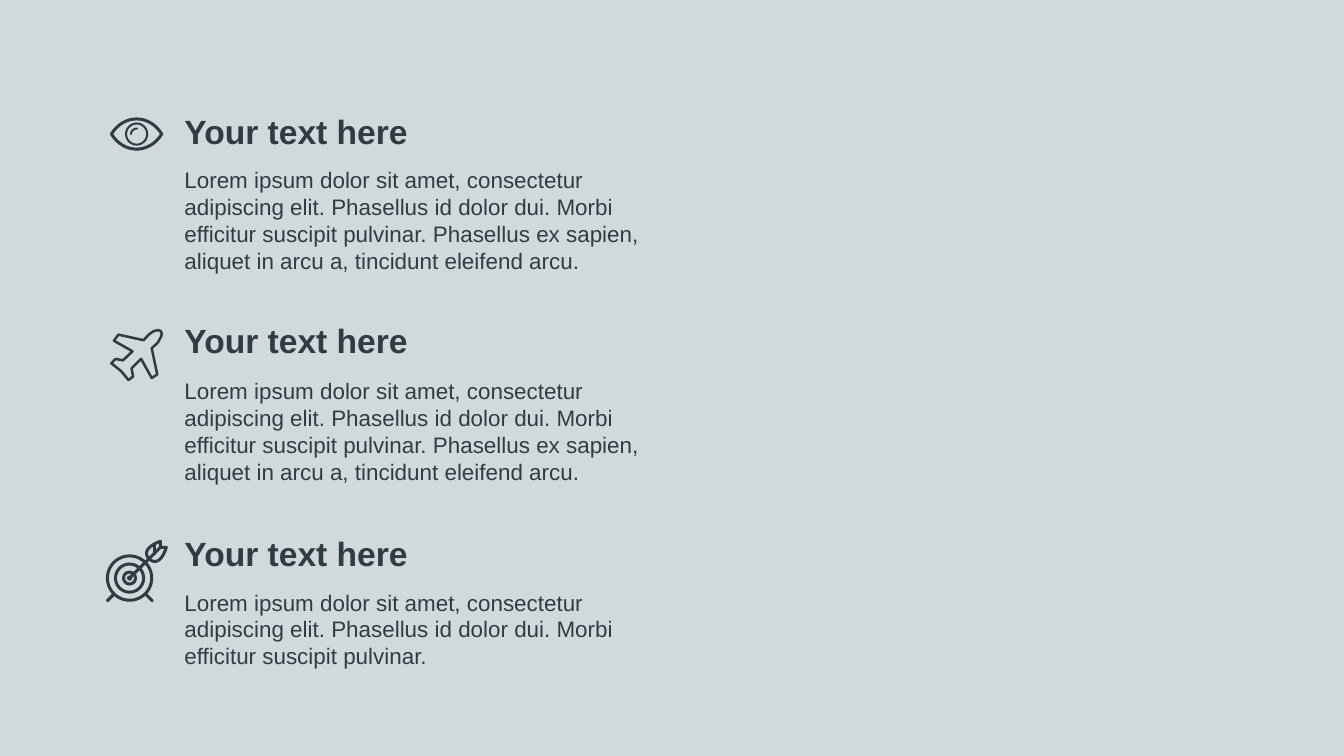
from dataclasses import dataclass

from lxml.etree import SubElement
from pptx import Presentation
from pptx.dml.color import RGBColor
from pptx.enum.shapes import MSO_CONNECTOR, MSO_SHAPE
from pptx.enum.text import MSO_AUTO_SIZE
from pptx.oxml.ns import qn
from pptx.util import Pt

PX = 9144
BODY_PITCH = 419
LINE_HEIGHT = 53
BOX_PADDING = 13


@dataclass(frozen=True)
class Theme:
    background: RGBColor = RGBColor(0xD2, 0xD9, 0xDD)
    ink: RGBColor = RGBColor(0x31, 0x3C, 0x41)
    font: str = "Arial"
    heading_size: int = 48
    body_size: int = 32


def cubic(start, control_1, control_2, end, steps=16):
    points = []
    for step in range(steps + 1):
        t = step / steps
        weights = ((1 - t) ** 3, 3 * t * (1 - t) ** 2, 3 * t * t * (1 - t), t ** 3)
        corners = (start, control_1, control_2, end)
        points.append(tuple(sum(w * c[axis] for w, c in zip(weights, corners))
                            for axis in (0, 1)))
    return points


class Canvas:
    def __init__(self, slide, theme):
        self.slide = slide
        self.theme = theme
        fill = slide.background.fill
        fill.solid()
        fill.fore_color.rgb = theme.background

    def text(self, left, top, width, height, content, size, bold=False):
        box = self.slide.shapes.add_textbox(left * PX, top * PX, width * PX, height * PX)
        frame = box.text_frame
        frame.word_wrap = True
        frame.auto_size = MSO_AUTO_SIZE.SHAPE_TO_FIT_TEXT
        frame.text = content
        font = frame.paragraphs[0].runs[0].font
        font.name = self.theme.font
        font.size = Pt(size)
        font.bold = bold
        font.color.rgb = self.theme.ink

    def stroke(self, shape, weight):
        shape.line.color.rgb = self.theme.ink
        shape.line.width = weight * PX
        outline = shape.line._get_or_add_ln()
        outline.set("cap", "rnd")
        SubElement(outline, qn("a:round"))

    def outline(self, points, weight, close=True):
        corners = [(round(x * PX), round(y * PX)) for x, y in points]
        builder = self.slide.shapes.build_freeform(*corners[0], scale=1.0)
        builder.add_line_segments(corners[1:], close=close)
        shape = builder.convert_to_shape()
        shape.shadow.inherit = False
        shape.fill.background()
        self.stroke(shape, weight)

    def circle(self, center, diameter, weight=0):
        left, top = (value - diameter // 2 for value in center)
        shape = self.slide.shapes.add_shape(
            MSO_SHAPE.OVAL, left * PX, top * PX, diameter * PX, diameter * PX)
        shape.shadow.inherit = False
        if weight:
            shape.fill.background()
            self.stroke(shape, weight)
        else:
            shape.fill.solid()
            shape.fill.fore_color.rgb = self.theme.ink
            shape.line.fill.background()

    def line(self, start, end, weight):
        connector = self.slide.shapes.add_connector(
            MSO_CONNECTOR.STRAIGHT, *(value * PX for value in start + end))
        self.stroke(connector, weight)
        SubElement(connector._element.spPr, qn("a:effectLst"))


def draw_eye(canvas):
    left, right = (221, 266), (321, 266)
    upper_lid = cubic(left, (246, 226), (296, 226), right)
    lower_lid = cubic(right, (296, 306), (246, 306), left)
    canvas.outline(upper_lid + lower_lid[1:-1], 6)
    canvas.circle((271, 266), 42, 4)
    canvas.outline(cubic((260, 266), (260, 260), (265, 255), (272, 255)), 4, close=False)


def draw_plane(canvas):
    canvas.outline([
        (221, 721), (229, 712), (244, 715), (263, 697), (226, 676), (235, 664),
        (285, 675), (296, 663), (305, 657), (314, 655), (319, 657), (321, 662),
        (320, 667), (313, 680), (301, 691), (312, 743), (301, 750), (280, 712),
        (261, 731), (264, 747), (255, 754), (240, 736),
    ], 5)


def draw_target(canvas):
    center = (257, 1147)
    for diameter in (88, 56, 24):
        canvas.circle(center, diameter, 6)
    canvas.circle(center, 10)
    for start, end in (
        (center, (318, 1086)),
        ((306, 1080), (306, 1099)),
        ((213, 1192), (226, 1179)),
        ((302, 1192), (289, 1179)),
    ):
        canvas.line(start, end, 6)
    fletching = (
        cubic((318, 1074), (310, 1077), (294, 1084), (291, 1095))
        + cubic((291, 1095), (289, 1105), (299, 1114), (307, 1114))[1:]
        + cubic((307, 1114), (319, 1114), (326, 1098), (330, 1086))[1:]
        + [(318, 1086)]
    )
    canvas.outline(fletching, 6)


def main():
    theme = Theme()
    presentation = Presentation()
    presentation.slide_width = 2666 * PX
    presentation.slide_height = 1500 * PX
    slide = presentation.slides.add_slide(presentation.slide_layouts[6])
    canvas = Canvas(slide, theme)

    short_text = ("Lorem ipsum dolor sit amet, consectetur adipiscing elit. "
                  "Phasellus id dolor dui. Morbi efficitur suscipit pulvinar.")
    long_text = short_text + (" Phasellus ex sapien, aliquet in arcu a, "
                              "tincidunt eleifend arcu.")
    sections = (
        (215, long_text, 4, draw_eye),
        (629, long_text, 4, draw_plane),
        (1052, short_text, 3, draw_target),
    )
    for index, (heading_top, body, line_count, draw_icon) in enumerate(sections):
        canvas.text(356, 325 + index * BODY_PITCH, 980,
                    line_count * LINE_HEIGHT + BOX_PADDING, body, theme.body_size)
        draw_icon(canvas)
        canvas.text(356, heading_top, 921, 91, "Your text here",
                    theme.heading_size, bold=True)

    presentation.save("out.pptx")


if __name__ == "__main__":
    main()
